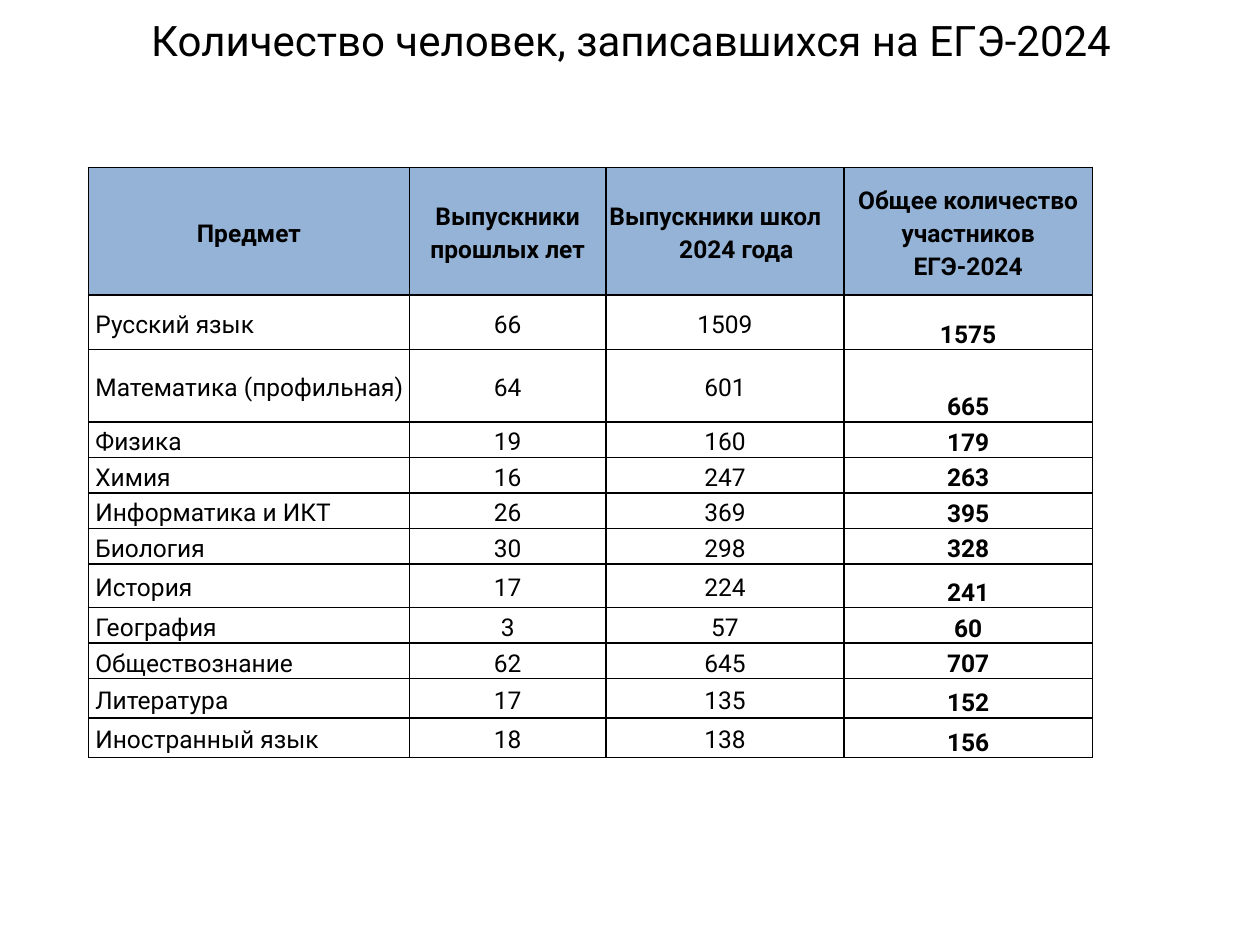
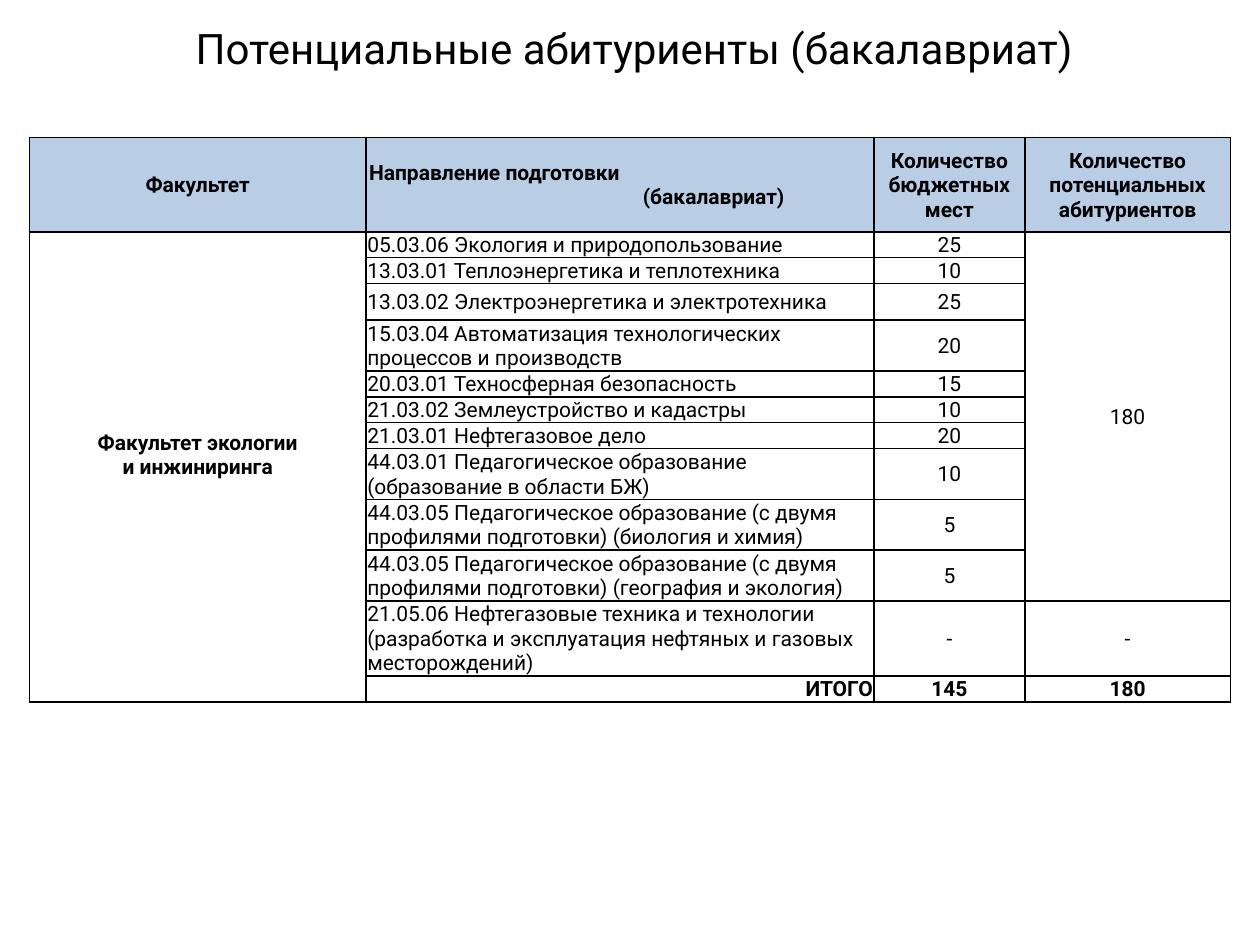
from lxml import etree
from pptx import Presentation
from pptx.dml.color import RGBColor
from pptx.enum.text import MSO_ANCHOR, PP_ALIGN
from pptx.oxml.ns import qn
from pptx.util import Pt

LEFT, CENTER, RIGHT = PP_ALIGN.LEFT, PP_ALIGN.CENTER, PP_ALIGN.RIGHT
MIDDLE, BOTTOM = MSO_ANCHOR.MIDDLE, MSO_ANCHOR.BOTTOM
TITLE_ONLY = 5
FONT = "Roboto"
COLORS = {
    "ink": "000000",
    "paper": "FFFFFF",
    "exam_header": "95B3D7",
    "faculty_header": "B9CDE5",
}

EXAM_HEADER = ["Предмет", "Выпускники прошлых лет",
               "Выпускники школ\n2024 года",
               "Общее количество участников ЕГЭ-2024"]
# Subject, graduates of past years, graduates of 2024, total, row height
EXAMS = [
    ("Русский язык", 66, 1509, 1575, 31),
    ("Математика (профильная)", 64, 601, 665, 41.5),
    ("Физика", 19, 160, 179, 20.3),
    ("Химия", 16, 247, 263, 20.3),
    ("Информатика и ИКТ", 26, 369, 395, 20.3),
    ("Биология", 30, 298, 328, 20.3),
    ("История", 17, 224, 241, 25),
    ("География", 3, 57, 60, 20.3),
    ("Обществознание", 62, 645, 707, 20.3),
    ("Литература", 17, 135, 152, 22.5),
    ("Иностранный язык", 18, 138, 156, 22.5),
]

FACULTY_HEADER = ["Факультет", "Направление подготовки\n(бакалавриат)",
                  "Количество бюджетных мест",
                  "Количество потенциальных абитуриентов"]
# Programme, funded places, row height
PROGRAMMES = [
    ("05.03.06 Экология и природопользование", "25", 14.8),
    ("13.03.01 Теплоэнергетика и теплотехника", "10", 14.8),
    ("13.03.02 Электроэнергетика и электротехника", "25", 20.9),
    ("15.03.04 Автоматизация технологических процессов и производств", "20", 29),
    ("20.03.01 Техносферная безопасность", "15", 14.8),
    ("21.03.02 Землеустройство и кадастры", "10", 14.8),
    ("21.03.01 Нефтегазовое дело", "20", 14.8),
    ("44.03.01 Педагогическое образование (образование в области БЖ)", "10", 29),
    ("44.03.05 Педагогическое образование (с двумя профилями подготовки) "
     "(биология и химия)", "5", 29),
    ("44.03.05 Педагогическое образование (с двумя профилями подготовки) "
     "(география и экология)", "5", 29),
    ("21.05.06 Нефтегазовые техника и технологии (разработка и эксплуатация "
     "нефтяных и газовых месторождений)", "-", 43),
]


def rgb(name):
    return RGBColor.from_string(COLORS[name])


def indent(paragraph, left=0, right=0):
    properties = paragraph._p.get_or_add_pPr()
    properties.set("marL", str(Pt(left)))
    properties.set("marR", str(Pt(right)))


class Deck:
    """Shared style and the slide being built."""

    def __init__(self):
        self.presentation = Presentation()
        self.presentation.slide_width = Pt(720)
        self.presentation.slide_height = Pt(540)
        self.slide = None

    def add_slide(self):
        layout = self.presentation.slide_layouts[TITLE_ONLY]
        self.slide = self.presentation.slides.add_slide(layout)

    def style_text(self, paragraph, size, bold=False, align=CENTER):
        paragraph.alignment = align
        for run in paragraph.runs:
            run.font.name = FONT
            run.font.size = Pt(size)
            run.font.bold = bold
            run.font.color.rgb = rgb("ink")

    def title(self, text, left, width, height):
        heading = self.slide.shapes.title
        heading.left, heading.top = Pt(left), Pt(0)
        heading.width, heading.height = Pt(width), Pt(height)
        heading.text_frame.text = text
        heading.text_frame.vertical_anchor = MIDDLE
        self.style_text(heading.text_frame.paragraphs[0], 24)

    def table(self, left, top, widths, heights):
        frame = self.slide.shapes.add_table(
            len(heights), len(widths), Pt(left), Pt(top),
            Pt(sum(widths)), Pt(sum(heights)))
        grid = frame.table
        grid.horz_banding = grid.first_row = False
        for column, width in zip(grid.columns, widths):
            column.width = Pt(width)
        for row, height in zip(grid.rows, heights):
            row.height = Pt(height)
        for cell in grid.iter_cells():
            self.borders(cell)
            cell.fill.solid()
            cell.fill.fore_color.rgb = rgb("paper")
            cell.margin_left = cell.margin_right = cell.margin_top = Pt(0.7)
            cell.margin_bottom = Pt(0)
        return grid

    def borders(self, cell):
        properties = cell._tc.get_or_add_tcPr()
        for side in ("a:lnL", "a:lnR", "a:lnT", "a:lnB"):
            line = etree.SubElement(properties, qn(side), w=str(Pt(1)))
            fill = etree.SubElement(line, qn("a:solidFill"))
            etree.SubElement(fill, qn("a:srgbClr"), val=COLORS["ink"])

    def cell_text(self, cell, text, size, bold=False, align=CENTER,
                  anchor=MIDDLE, loose=False):
        """Fill a cell; loose text has wider lines and space after."""
        cell.text_frame.text = text
        cell.vertical_anchor = anchor
        for paragraph in cell.text_frame.paragraphs:
            self.style_text(paragraph, size, bold, align)
            if loose:
                paragraph.line_spacing = 1.15
        if loose:
            paragraph.space_after = Pt(10)

    def header(self, grid, labels, size, color, loose=False):
        for column, label in enumerate(labels):
            cell = grid.cell(0, column)
            cell.fill.fore_color.rgb = rgb(color)
            self.cell_text(cell, label, size, bold=True, loose=loose)


def exam_slide(deck):
    deck.add_slide()
    deck.title("Количество человек, записавшихся на ЕГЭ-2024", 36.7, 648, 45.4)
    grid = deck.table(50.5, 95.6, [183.5, 112.3, 136, 142],
                      [73] + [exam[-1] for exam in EXAMS])
    deck.header(grid, EXAM_HEADER, 14, "exam_header", loose=True)
    schools, year = grid.cell(0, 2).text_frame.paragraphs
    indent(schools, right=11)
    indent(year, left=13)

    for row, (subject, past, current, total, _) in enumerate(EXAMS, 1):
        subject_cell = grid.cell(row, 0)
        deck.cell_text(subject_cell, subject, 14, align=LEFT, loose=True)
        indent(subject_cell.text_frame.paragraphs[0], left=3.3)
        deck.cell_text(grid.cell(row, 1), str(past), 14, loose=True)
        deck.cell_text(grid.cell(row, 2), str(current), 14, loose=True)
        deck.cell_text(grid.cell(row, 3), str(total), 14, bold=True, anchor=BOTTOM)


def faculty_slide(deck):
    deck.add_slide()
    deck.title("Потенциальные абитуриенты (бакалавриат)", -11.5, 748, 54.7)
    grid = deck.table(16.8, 78.7, [192.4, 290.2, 86.3, 117.4],
                      [53.8] + [programme[-1] for programme in PROGRAMMES] + [14.5])
    deck.header(grid, FACULTY_HEADER, 12, "faculty_header")
    programme_label, degree = grid.cell(0, 1).text_frame.paragraphs
    programme_label.alignment = degree.alignment = LEFT
    indent(programme_label, left=1)
    indent(degree, left=157.5)

    total_row = len(PROGRAMMES) + 1
    faculty, applicants = grid.cell(1, 0), grid.cell(1, 3)
    faculty.merge(grid.cell(total_row, 0))
    applicants.merge(grid.cell(total_row - 2, 3))
    deck.cell_text(faculty, "Факультет экологии\nи инжиниринга", 12, bold=True)
    faculty.margin_bottom = Pt(14)
    deck.cell_text(applicants, "180", 12)

    for row, (programme, places, _) in enumerate(PROGRAMMES, 1):
        deck.cell_text(grid.cell(row, 1), programme, 12, align=LEFT)
        deck.cell_text(grid.cell(row, 2), places, 12)
    deck.cell_text(grid.cell(total_row - 1, 3), "-", 12)

    deck.cell_text(grid.cell(total_row, 1), "ИТОГО", 12, bold=True,
                   align=RIGHT, anchor=BOTTOM)
    deck.cell_text(grid.cell(total_row, 2), "145", 12, bold=True)
    deck.cell_text(grid.cell(total_row, 3), "180", 12, bold=True)


def main():
    deck = Deck()
    exam_slide(deck)
    faculty_slide(deck)
    deck.presentation.save("out.pptx")


if __name__ == "__main__":
    main()
